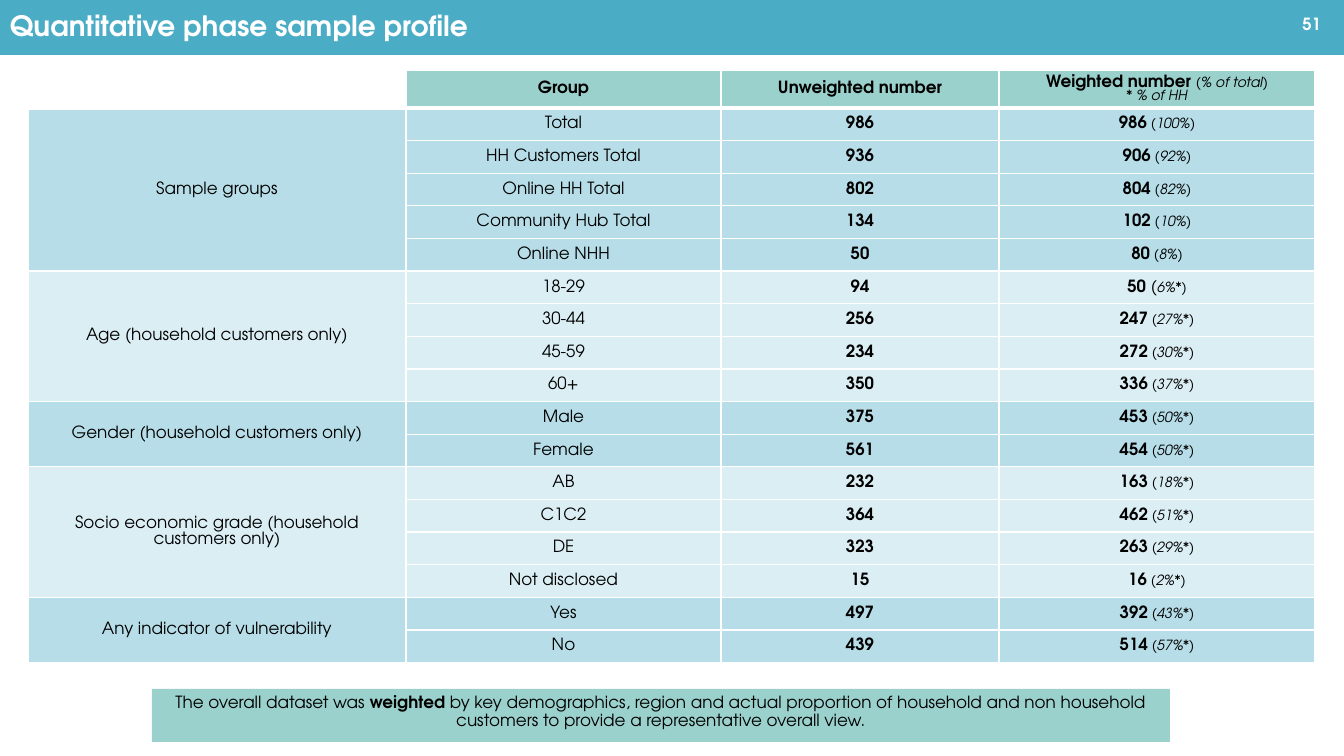
import pptx
import pptx.dml.color
import pptx.enum.shapes
import pptx.enum.text
import pptx.oxml
import pptx.oxml.ns
import pptx.util

ALIGN = pptx.enum.text.PP_ALIGN
ANCHOR = pptx.enum.text.MSO_ANCHOR
EMU_PER_PX = 914400 / 100.8
FONT = "TeX Gyre Adventor"
WHITE, BLACK = "FFFFFF", "000000"
BLUE, TEAL = "4BACC6", "9BD1CC"
BANDS = ["B7DEE8", "DBEEF4"]

COLUMN_WIDTHS = [378, 315, 278, 316]
HEADER_HEIGHT, BODY_HEIGHT = 38, 555
LARGE_BRACKET_GROUP = "18-29"

# Each section: label, then rows of group, unweighted number, weighted number, share
SECTIONS = [
    ("Sample groups", [
        ("Total", "986", "986", "(100%)"),
        ("HH Customers Total", "936", "906", "(92%)"),
        ("Online HH Total", "802", "804", "(82%)"),
        ("Community Hub Total", "134", "102", "(10%)"),
        ("Online NHH", "50", "80", "(8%)"),
    ]),
    ("Age (household customers only)", [
        ("18-29", "94", "50", "(6%*)"),
        ("30-44", "256", "247", "(27%*)"),
        ("45-59", "234", "272", "(30%*)"),
        ("60+", "350", "336", "(37%*)"),
    ]),
    ("Gender (household customers only)", [
        ("Male", "375", "453", "(50%*)"),
        ("Female", "561", "454", "(50%*)"),
    ]),
    ("Socio economic grade (household customers only)", [
        ("AB", "232", "163", "(18%*)"),
        ("C1C2", "364", "462", "(51%*)"),
        ("DE", "323", "263", "(29%*)"),
        ("Not disclosed", "15", "16", "(2%*)"),
    ]),
    ("Any indicator of vulnerability", [
        ("Yes", "497", "392", "(43%*)"),
        ("No", "439", "514", "(57%*)"),
    ]),
]


def px(length):
    return pptx.util.Emu(round(length * EMU_PER_PX))


def color(value):
    return pptx.dml.color.RGBColor.from_string(value)


def plain(text, size=12):
    return text, size, False, False


def bold(text, size=12):
    return text, size, True, False


def italic(text, size=10):
    return text, size, False, True


def weighted_runs(group, weighted, share):
    if group == LARGE_BRACKET_GROUP:
        return [bold(weighted + " "), italic(share[0], 12), italic(share[1:])]
    return [bold(weighted), plain(" ", 10), italic(share)]


def write(text_frame, lines, font_color=BLACK, align=ALIGN.CENTER, spacing=0.9):
    """Fill a text frame; each line is a list of (text, size, bold, italic) runs."""
    text_frame.word_wrap = True
    for index, line in enumerate(lines):
        paragraph = text_frame.add_paragraph() if index else text_frame.paragraphs[0]
        paragraph.alignment = align
        paragraph.line_spacing = spacing
        for text, size, is_bold, is_italic in line:
            run = paragraph.add_run()
            run.text = text
            run.font.name = FONT
            run.font.size = pptx.util.Pt(size)
            run.font.bold = is_bold
            run.font.italic = is_italic
            run.font.color.rgb = color(font_color)


def add_bar(slide, left, top, width, height, fill, anchor):
    shape = slide.shapes.add_shape(
        pptx.enum.shapes.MSO_SHAPE.RECTANGLE, px(left), px(top), px(width), px(height))
    shape.shadow.inherit = False
    shape.fill.solid()
    shape.fill.fore_color.rgb = color(fill)
    shape.line.fill.background()
    shape.text_frame.vertical_anchor = anchor
    return shape


def set_borders(cell, bottom_width):
    properties = cell._tc.get_or_add_tcPr()
    for index, side in enumerate("LRTB"):
        width = pptx.util.Pt(bottom_width if side == "B" else 1)
        properties.insert(index, pptx.oxml.parse_xml(
            f'<a:ln{side} {pptx.oxml.ns.nsdecls("a")} w="{width}"><a:solidFill>'
            f'<a:srgbClr val="{WHITE}"/></a:solidFill></a:ln{side}>'))


def style_cell(cell, fill, lines=(), bottom_width=1):
    cell.fill.solid()
    cell.fill.fore_color.rgb = color(fill)
    set_borders(cell, bottom_width)
    cell.vertical_anchor = ANCHOR.MIDDLE
    cell.margin_top = cell.margin_bottom = px(3)
    write(cell.text_frame, lines, spacing=1.0)


def add_profile_table(slide):
    row_count = sum(len(rows) for _, rows in SECTIONS)
    table = slide.shapes.add_table(
        row_count + 1, len(COLUMN_WIDTHS), px(28), px(70),
        px(sum(COLUMN_WIDTHS)), px(HEADER_HEIGHT + BODY_HEIGHT)).table
    table.first_row = table.horz_banding = False
    for column, width in zip(table.columns, COLUMN_WIDTHS):
        column.width = px(width)
    for row in table.rows:
        row.height = px(BODY_HEIGHT) // row_count
    table.rows[0].height = px(HEADER_HEIGHT)

    # Header row
    headers = [
        [[bold("Group")]],
        [[bold("Unweighted number")]],
        [[bold("Weighted number "), italic("(% of total)")], [italic("* % of HH")]],
    ]
    style_cell(table.cell(0, 0), WHITE, bottom_width=3)
    for column_index, lines in enumerate(headers, 1):
        style_cell(table.cell(0, column_index), TEAL, lines, bottom_width=3)

    # Sections with alternating fills and a merged label
    top = 1
    for section_index, (label, rows) in enumerate(SECTIONS):
        fill = BANDS[section_index % 2]
        for row_index, (group, unweighted, weighted, share) in enumerate(rows, top):
            style_cell(table.cell(row_index, 0), fill,
                       [[plain(label)]] if row_index == top else ())
            style_cell(table.cell(row_index, 1), fill, [[plain(group)]])
            style_cell(table.cell(row_index, 2), fill, [[bold(unweighted)]])
            style_cell(table.cell(row_index, 3), fill,
                       [weighted_runs(group, weighted, share)])
        bottom = top + len(rows) - 1
        table.cell(top, 0).merge(table.cell(bottom, 0))
        top = bottom + 1


def main():
    presentation = pptx.Presentation()
    presentation.slide_width = px(1344)
    presentation.slide_height = px(756)
    slide = presentation.slides.add_slide(presentation.slide_layouts[6])

    # Title bar
    title = add_bar(slide, 0, 0, 1344, 55, BLUE, ANCHOR.MIDDLE)
    write(title.text_frame, [[bold("Quantitative phase sample profile", 20)]],
          WHITE, ALIGN.LEFT)

    add_profile_table(slide)

    # Page number
    number = slide.shapes.add_textbox(px(1243), px(1), px(88), px(45))
    number.text_frame.vertical_anchor = ANCHOR.MIDDLE
    write(number.text_frame, [[bold("51")]], WHITE, ALIGN.RIGHT, 1.0)

    # Weighting note
    note = add_bar(slide, 152, 689, 1018, 53, TEAL, ANCHOR.TOP)
    write(note.text_frame, [[
        plain("The overall dataset was "),
        bold("weighted"),
        plain(" by key demographics, region and actual proportion of household and "
              "non household customers to provide a representative overall view."),
    ]])

    presentation.save("out.pptx")


if __name__ == "__main__":
    main()
